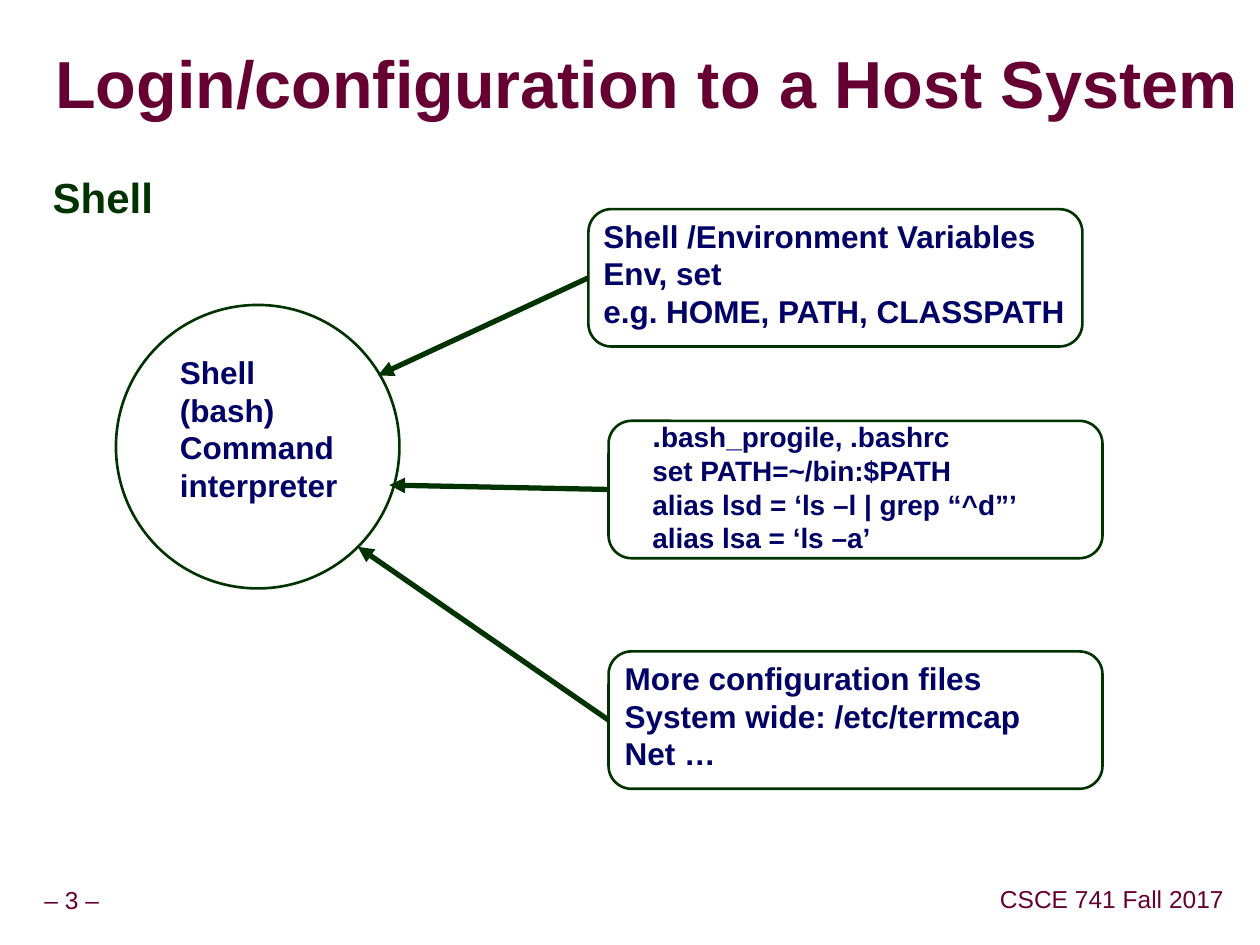
from dataclasses import dataclass
from typing import NamedTuple

from lxml.etree import SubElement
from pptx import Presentation
from pptx.dml.color import RGBColor
from pptx.enum.shapes import MSO_CONNECTOR as Connector
from pptx.enum.shapes import MSO_SHAPE as Preset
from pptx.enum.text import MSO_ANCHOR as Anchor
from pptx.enum.text import PP_ALIGN as Align
from pptx.oxml.ns import qn
from pptx.util import Inches, Pt


@dataclass(frozen=True)
class Theme:
    font: str = "Arial"
    maroon: RGBColor = RGBColor(0x66, 0x00, 0x33)
    green: RGBColor = RGBColor(0x00, 0x33, 0x00)
    navy: RGBColor = RGBColor(0x00, 0x00, 0x66)
    title_shadow: str = "808080"
    title_size: float = 38
    heading_size: float = 24
    label_size: float = 18
    code_size: float = 16
    footer_size: float = 14
    outline_width: float = 1.5
    arrow_width: float = 3


class Area(NamedTuple):
    left: float
    top: float
    width: float
    height: float


class Span(NamedTuple):
    text: str
    size: float


@dataclass(frozen=True)
class TextStyle:
    color: RGBColor
    bold: bool = True
    wrap: bool = True
    margins: tuple[float, float] = (0.1, 0.05)
    anchor: Anchor = Anchor.TOP
    align: Align = Align.LEFT
    line_spacing: float = 1.0


@dataclass(frozen=True)
class ConfigurationBox:
    left: float
    top: float
    text_area: Area
    lines: list[list[Span]]
    arrow_tip: tuple[float, float]


THEME = Theme()
BOX_WIDTH, BOX_HEIGHT = 3.92, 1.09
LABEL = TextStyle(THEME.navy)
FOOTER = TextStyle(THEME.maroon, bold=False, wrap=False, margins=(0.05, 0.05),
                   anchor=Anchor.MIDDLE, align=Align.CENTER, line_spacing=0.9)
TITLE = TextStyle(THEME.maroon, margins=(0, 0), anchor=Anchor.MIDDLE, line_spacing=0.87)
HEADING = TextStyle(THEME.green, line_spacing=0.95)


def lines_of(size: float, *texts: str) -> list[list[Span]]:
    """Make one single-run line of each text."""
    return [[Span(text, size)] for text in texts]


BOXES = [
    ConfigurationBox(
        4.67, 1.66, Area(4.69, 1.67, 3.9, 1.31),
        lines_of(THEME.label_size, "Shell /Environment Variables", "Env, set",
                 "e.g. HOME, PATH, CLASSPATH"),
        (3, 2.98)),
    ConfigurationBox(
        4.83, 3.34, Area(5.08, 3.25, 3.9, 1.55),
        [[Span(".", THEME.label_size), Span("bash_progile, .bashrc", THEME.code_size)]]
        + lines_of(THEME.code_size, "set PATH=~/bin:$PATH",
                   "alias lsd = ‘ls –l | grep “^d”’", "alias lsa = ‘ls –a’"),
        (3.09, 3.85)),
    ConfigurationBox(
        4.83, 5.17, Area(4.86, 5.18, 3.37, 1.01),
        lines_of(THEME.label_size, "More configuration files",
                 "System wide: /etc/termcap", "Net …"),
        (2.84, 4.34)),
]


def add_text(slide, area: Area, lines: list[list[Span]], style: TextStyle):
    text_box = slide.shapes.add_textbox(*map(Inches, area))
    frame = text_box.text_frame
    frame.word_wrap = style.wrap
    frame.vertical_anchor = style.anchor
    frame.margin_left = frame.margin_right = Inches(style.margins[0])
    frame.margin_top = frame.margin_bottom = Inches(style.margins[1])
    for index, spans in enumerate(lines):
        paragraph = frame.add_paragraph() if index else frame.paragraphs[0]
        paragraph.alignment = style.align
        paragraph.line_spacing = style.line_spacing
        for span in spans:
            run = paragraph.add_run()
            run.text = span.text
            run.font.name = THEME.font
            run.font.size = Pt(span.size)
            run.font.bold = style.bold
            run.font.color.rgb = style.color
    return text_box


def add_text_shadow(run) -> None:
    effects = run.font.fill._xPr.makeelement(qn("a:effectLst"))
    shadow = SubElement(effects, qn("a:outerShdw"), dist="50800", dir="2700000")
    SubElement(shadow, qn("a:srgbClr"), val=THEME.title_shadow)
    run.font.fill._xPr.find(qn("a:solidFill")).addnext(effects)


def add_outline(slide, preset: Preset, area: Area):
    shape = slide.shapes.add_shape(preset, *map(Inches, area))
    shape.shadow.inherit = False
    shape.fill.background()
    shape.line.color.rgb = THEME.green
    shape.line.width = Pt(THEME.outline_width)
    return shape


def add_arrow(slide, box, tip: tuple[float, float]) -> None:
    """Draw an arrow from the middle of the box's left side to the tip."""
    arrow = slide.shapes.add_connector(
        Connector.STRAIGHT, box.left, box.top + box.height // 2, *map(Inches, tip))
    arrow.begin_connect(box, 1)
    arrow.line.color.rgb = THEME.green
    arrow.line.width = Pt(THEME.arrow_width)
    SubElement(arrow.line._get_or_add_ln(), qn("a:tailEnd"), type="triangle")
    SubElement(arrow._element.spPr, qn("a:effectLst"))


def main() -> None:
    presentation = Presentation()
    presentation.slide_width, presentation.slide_height = Inches(10), Inches(7.5)
    slide = presentation.slides.add_slide(presentation.slide_layouts[6])

    add_text(slide, Area(0.24, 7, 0.66, 0.31), lines_of(THEME.footer_size, "– 3 –"), FOOTER)
    add_text(slide, Area(7.88, 6.99, 1.89, 0.31),
             lines_of(THEME.footer_size, "CSCE 741 Fall 2017"), FOOTER)
    title = add_text(slide, Area(0.44, 0.27, 9.53, 0.85),
                     lines_of(THEME.title_size, "Login/configuration to a Host System"), TITLE)
    add_text_shadow(title.text_frame.paragraphs[0].runs[0])
    add_text(slide, Area(0.32, 1.34, 9.09, 5.71),
             lines_of(THEME.heading_size, "Shell"), HEADING)

    add_outline(slide, Preset.OVAL, Area(0.92, 2.42, 2.25, 2.25))
    add_text(slide, Area(1.33, 2.75, 1.51, 1.31),
             lines_of(THEME.label_size, "Shell", "(bash)", "Command", "interpreter"), LABEL)

    for box in BOXES:
        outline = add_outline(slide, Preset.ROUNDED_RECTANGLE,
                              Area(box.left, box.top, BOX_WIDTH, BOX_HEIGHT))
        add_text(slide, box.text_area, box.lines, LABEL)
        add_arrow(slide, outline, box.arrow_tip)

    presentation.save("out.pptx")


if __name__ == "__main__":
    main()
